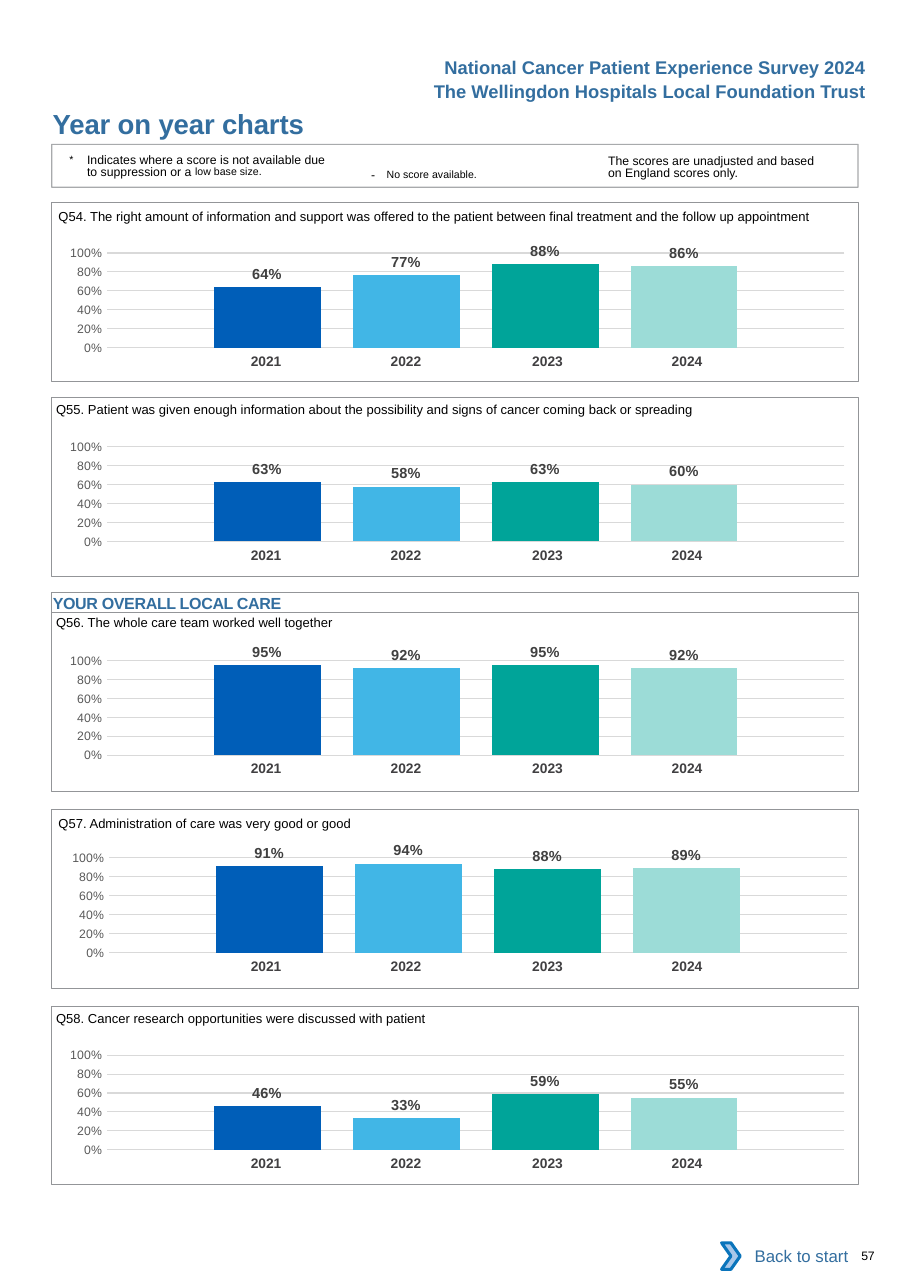
from lxml import etree
from pptx import Presentation
from pptx.chart.data import CategoryChartData
from pptx.dml.color import RGBColor
from pptx.enum.chart import XL_CHART_TYPE, XL_LABEL_POSITION, XL_TICK_MARK
from pptx.enum.shapes import MSO_SHAPE
from pptx.enum.text import MSO_ANCHOR, PP_ALIGN
from pptx.oxml.ns import qn
from pptx.util import Pt

RECT, CHEVRON = MSO_SHAPE.RECTANGLE, MSO_SHAPE.CHEVRON
LEFT, CENTER, RIGHT = PP_ALIGN.LEFT, PP_ALIGN.CENTER, PP_ALIGN.RIGHT
TOP, MIDDLE = MSO_ANCHOR.TOP, MSO_ANCHOR.MIDDLE
COLUMN = XL_CHART_TYPE.COLUMN_CLUSTERED
OUTSIDE, NO_TICK = XL_LABEL_POSITION.OUTSIDE_END, XL_TICK_MARK.NONE

BLACK = RGBColor(0x00, 0x00, 0x00)
WHITE = RGBColor(0xFF, 0xFF, 0xFF)
BLUE = RGBColor(0x33, 0x6E, 0x9F)
GRAY = RGBColor(0x93, 0x95, 0x98)
GRID = RGBColor(0xD9, 0xD9, 0xD9)
AXIS = RGBColor(0x59, 0x59, 0x59)
VALUE = RGBColor(0x40, 0x40, 0x40)
YEAR = RGBColor(0x41, 0x40, 0x42)
PALE = RGBColor(0xA8, 0xC7, 0xE9)
EDGE = RGBColor(0x0A, 0x74, 0xBB)
BARS = [RGBColor(0x00, 0x5E, 0xB8), RGBColor(0x41, 0xB6, 0xE6),
        RGBColor(0x00, 0xA4, 0x99), RGBColor(0x9C, 0xDC, 0xD7)]

YEARS = ["2021", "2022", "2023", "2024"]
COLS = [91.4, 91.4, 96.6, 91.4]
INSETS = [0, 0, 2.9, 8.6]
PLAIN = "{2D5ABB26-0587-4C30-8999-92F81FD0307C}"
PLOT = {"layoutTarget": "inner", "xMode": "edge", "yMode": "edge",
        "x": 0.079, "y": 0.145, "w": 0.915, "h": 0.666}
EDGE_X, WIDE = 33.8, 527

# Frame top, caption left and top, chart left and top, caption, scores
PANELS = [
    (132.5, 38.2, 136.1, 28.1, 151.9,
     "Q54. The right amount of information and support was offered to the patient "
     "between final treatment and the follow up appointment",
     (0.64, 0.77, 0.88, 0.86)),
    (259.9, 36.7, 262.1, 28.1, 278.6,
     "Q55. Patient was given enough information about the possibility and signs "
     "of cancer coming back or spreading",
     (0.63, 0.58, 0.63, 0.6)),
    (400.3, 36.7, 401.8, 28.1, 418.3,
     "Q56. The whole care team worked well together",
     (0.95, 0.92, 0.95, 0.92)),
    (529.2, 38.2, 532.8, 29.5, 547.2,
     "Q57. Administration of care was very good or good",
     (0.91, 0.94, 0.88, 0.89)),
    (657.4, 36.7, 660.2, 28.1, 676.1,
     "Q58. Cancer research opportunities were discussed with patient",
     (0.46, 0.33, 0.59, 0.55)),
]


def style(font, size, color, bold=False, face="Arial"):
    font.name, font.size, font.bold = face, Pt(size), bold
    font.color.rgb = color


def write(para, text, size=8, color=BLACK, bold=False, base=0, space=0):
    run = para.add_run()
    run.text = text
    style(run.font, size, color, bold)
    props = run.font._element
    if base:
        props.set("baseline", str(base * 1000))
    if space:
        props.set("spc", str(round(space * 100)))


class Page:
    def __init__(self, slide):
        self.shapes = slide.shapes

    def setup(self, shape, align=LEFT, anchor=TOP, pads=(0, 0, 0, 0)):
        frame = shape.text_frame
        frame.word_wrap, frame.vertical_anchor = True, anchor
        (frame.margin_left, frame.margin_top,
         frame.margin_right, frame.margin_bottom) = map(Pt, pads)
        para = frame.paragraphs[0]
        para.alignment = align
        return para

    def label(self, x, y, w, h, text="", align=LEFT, **form):
        box = self.shapes.add_textbox(Pt(x), Pt(y), Pt(w), Pt(h))
        para = self.setup(box, align)
        if text:
            write(para, text, **form)
        return para

    def block(self, x, y, w, h, kind=RECT, fill=None, line=None, width=0.5):
        shape = self.shapes.add_shape(kind, Pt(x), Pt(y), Pt(w), Pt(h))
        shape.shadow.inherit = False
        if fill is None:
            shape.fill.background()
        else:
            shape.fill.solid()
            shape.fill.fore_color.rgb = fill
        if line is None:
            shape.line.fill.background()
        else:
            shape.line.color.rgb = line
            shape.line.width = Pt(width)
        return shape

    def years(self, x, y):
        item = self.shapes.add_table(1, len(YEARS), Pt(x), Pt(y), Pt(sum(COLS)), Pt(19.4))
        table = item.table
        table.first_row = table.horz_banding = False
        table._tbl.tblPr.find(qn("a:tableStyleId")).text = PLAIN
        table.rows[0].height = Pt(19.4)
        for i, (year, wide, inset) in enumerate(zip(YEARS, COLS, INSETS)):
            table.columns[i].width = Pt(wide)
            cell = table.cell(0, i)
            cell.fill.background()
            cell.margin_left, cell.margin_right = Pt(7.2), Pt(inset)
            cell.margin_top = cell.margin_bottom = Pt(3.6)
            para = cell.text_frame.paragraphs[0]
            para.alignment = CENTER
            write(para, year, size=9, color=YEAR, bold=True)

    def chart(self, x, y, scores):
        data = CategoryChartData(number_format="0%")
        data.categories = ["1"]
        for i, score in enumerate(scores, 1):
            data.add_series(f"Series {i}", [score])
        chart = self.shapes.add_chart(COLUMN, Pt(x), Pt(y), Pt(WIDE), Pt(92.9), data).chart
        chart.has_legend = chart.has_title = False
        style(chart.font, 10, BLACK, face="Calibri")
        # Axes
        chart.category_axis.visible = False
        axis = chart.value_axis
        axis.minimum_scale, axis.maximum_scale, axis.major_unit = 0, 1, 0.2
        axis.major_tick_mark = axis.minor_tick_mark = NO_TICK
        axis.format.line.fill.background()
        axis.major_gridlines.format.line.color.rgb = GRID
        axis.major_gridlines.format.line.width = Pt(0.75)
        axis.tick_labels.number_format = "0%"
        axis.tick_labels.number_format_is_linked = False
        style(axis.tick_labels.font, 8, AXIS)
        # Bars
        plot = chart.plots[0]
        plot.gap_width, plot.overlap, plot.vary_by_categories = 200, -30, False
        for bar, color in zip(plot.series, BARS):
            bar.format.fill.solid()
            bar.format.fill.fore_color.rgb = color
            marks = bar.data_labels
            marks.show_value, marks.position = True, OUTSIDE
            marks.number_format, marks.number_format_is_linked = "0%", False
            style(marks.font, 9.5, VALUE, bold=True)
        # Fixed plot area
        area = chart._chartSpace.chart.plotArea
        for old in area.findall(qn("c:layout")):
            area.remove(old)
        layout = etree.Element(qn("c:layout"))
        manual = etree.SubElement(layout, qn("c:manualLayout"))
        for key, val in PLOT.items():
            etree.SubElement(manual, qn("c:" + key)).set("val", str(val))
        area.insert(0, layout)


def main():
    deck = Presentation()
    deck.slide_width, deck.slide_height = Pt(594.72), Pt(841.68)
    page = Page(deck.slides.add_slide(deck.slide_layouts[6]))

    # Heading
    heads = ["National Cancer Patient Experience Survey 2024",
             "The Wellingdon Hospitals Local Foundation Trust"]
    for i, head in enumerate(heads):
        page.label(240, 36.7 + 15.9 * i, 325.9, 14, head, RIGHT,
                   size=12, color=BLUE, bold=True)
    page.label(34.5, 70, 324, 21.6, "Year on year charts",
               size=18, color=BLUE, bold=True, space=-0.1)

    # Notes on the scores
    key = page.block(EDGE_X, 94.3, WIDE, 28.1, line=GRAY, width=0.75)
    tint = key.line.fill._xPr.find(qn("a:solidFill"))[0]
    etree.SubElement(tint, qn("a:alpha")).set("val", "80000")
    star = page.label(45.4, 101.6, 172, 17)
    star.line_spacing = Pt(8.1)
    star._p.get_or_add_pPr().set("marL", str(Pt(11.5)))
    star._p.get_or_add_pPr().set("indent", str(Pt(-11.5)))
    write(star, "*\t", size=12, base=3)
    write(star, "Indicates where a score is not available due to suppression or a ")
    write(star, "low base size.", size=12, base=7)
    dash = page.label(242.6, 105.1, 117, 14)
    write(dash, "- ", space=2.6)
    write(dash, "No score available.", size=12, base=3)
    note = page.label(397.4, 101.6, 144.7, 17,
                      "The scores are unadjusted and based on England scores only.")
    note.line_spacing = Pt(8.1)

    # Section banner
    band = page.block(EDGE_X, 387.4, WIDE, 13, line=GRAY)
    write(page.setup(band, pads=(0.7, 0.7, 0, 0)), "YOUR OVERALL LOCAL CARE",
          size=10.5, color=BLUE, bold=True, space=-0.2)

    # Question panels
    for top, text_x, text_y, x, y, text, scores in PANELS:
        page.label(text_x, text_y, 520, 10, text, size=8.5)
        page.years(124.6, y + 75.6)
        page.chart(x, y, scores)
        page.block(EDGE_X, top, WIDE, 116.6, line=GRAY)

    # Footer
    back = page.block(476.6, 805.7, 85, 30.2, fill=WHITE)
    write(page.setup(back, RIGHT, MIDDLE, (7.2, 3.6, 7.2, 3.6)), "Back to start",
          size=11, color=BLUE)
    page.block(471.6, 812.2, 12.2, 17.3, CHEVRON, PALE, EDGE, 2)
    page.label(563, 815.8, 29, 9.4, "57", space=-0.2)

    deck.save("out.pptx")


if __name__ == "__main__":
    main()
